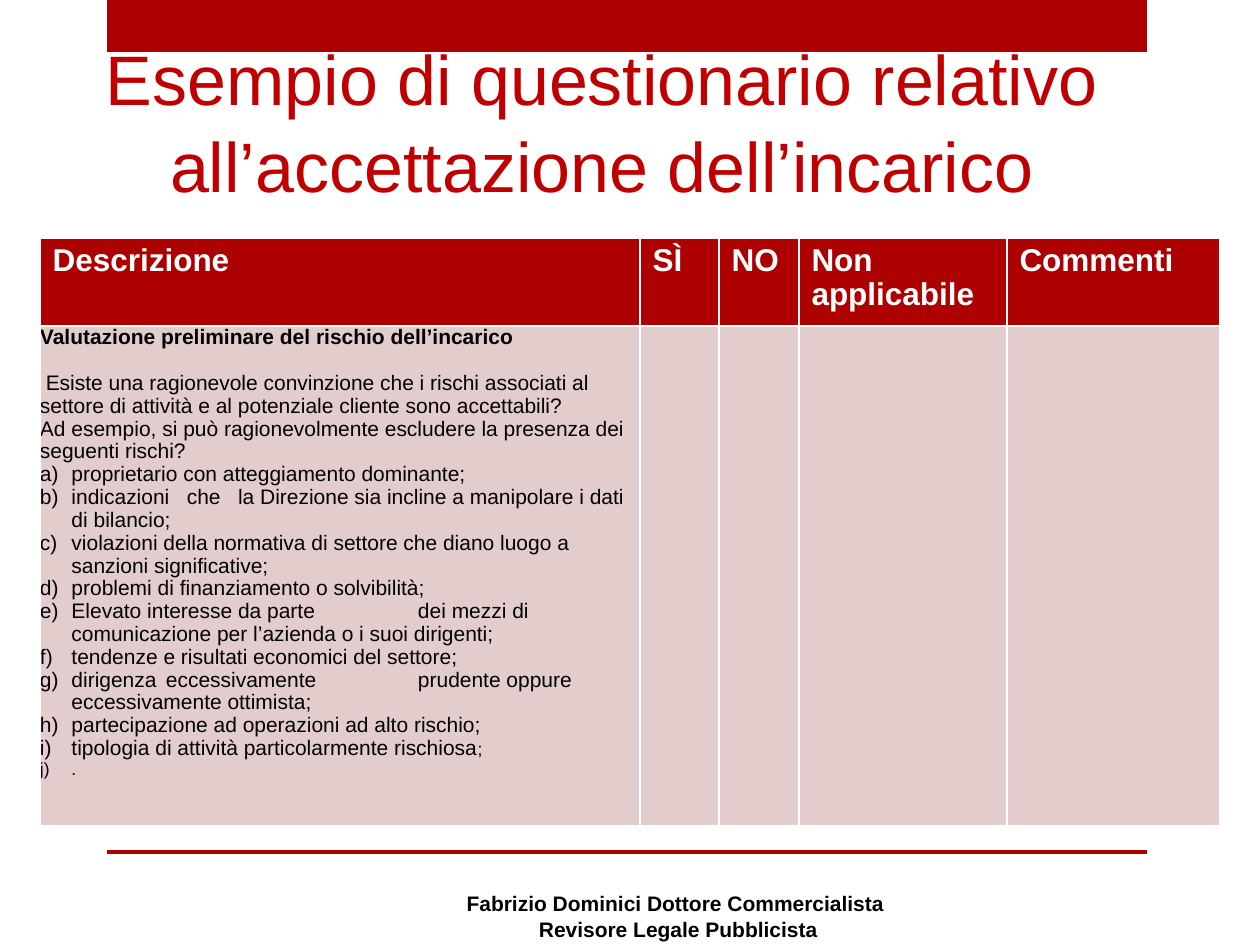
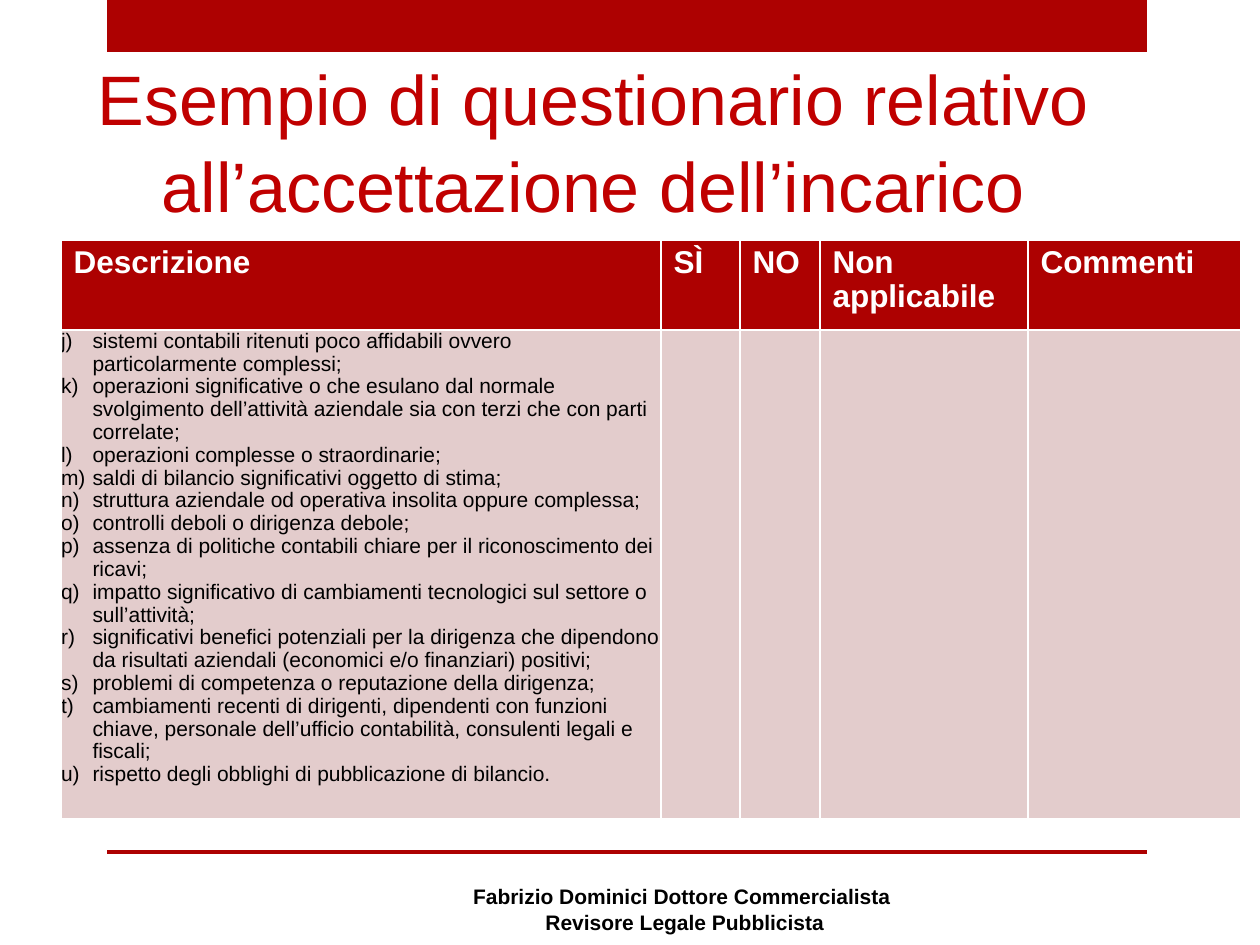
import pptx
import pptx.util
import pptx.dml.color
import pptx.enum.shapes
import pptx.enum.text
import pptx.oxml
import pptx.oxml.ns

SCALE = 914400 / 126
FONT = "Arial"
RED, TITLE, PALE = "AD0101", "C00000", "E3CCCC"
WHITE, BLACK = "FFFFFF", "000000"
INDENT = 31.5  # hanging indent of the lettered list, in px

HEADS = ["Descrizione", "SÌ", "NO", "Non applicabile", "Commenti"]
COLS = [600, 79, 80, 208, 213]
HEADING = "Esempio di questionario relativo all’accettazione dell’incarico"
FOOTER = "Fabrizio Dominici Dottore Commercialista\n Revisore Legale Pubblicista"

INTRO = [
    "Valutazione preliminare del rischio dell’incarico",
    " Esiste una ragionevole convinzione che i rischi associati al settore "
    "di attività e al potenziale cliente sono accettabili?",
    "Ad esempio, si può ragionevolmente escludere la presenza dei seguenti rischi?",
]
RISKS = [
    "proprietario con atteggiamento dominante;",
    "indicazioni   che   la Direzione sia incline a manipolare i dati di bilancio;",
    "violazioni della normativa di settore che diano luogo a sanzioni significative;",
    "problemi di finanziamento o solvibilità;",
    "Elevato interesse da parte\tdei mezzi di comunicazione per l’azienda o i suoi dirigenti;",
    "tendenze e risultati economici del settore;",
    "dirigenza\teccessivamente\tprudente oppure eccessivamente ottimista;",
    "partecipazione ad operazioni ad alto rischio;",
    "tipologia di attività particolarmente rischiosa",
    ".",
]
MORE = [
    "sistemi contabili ritenuti poco affidabili ovvero particolarmente complessi;",
    "operazioni significative o che esulano dal normale svolgimento "
    "dell’attività aziendale sia con terzi che con parti correlate;",
    "operazioni complesse o straordinarie;",
    "saldi di bilancio significativi oggetto di stima;",
    "struttura aziendale od operativa insolita oppure complessa;",
    "controlli deboli o dirigenza debole;",
    "assenza di politiche contabili chiare per il riconoscimento dei ricavi;",
    "impatto significativo di cambiamenti tecnologici sul settore o sull’attività;",
    "significativi benefici potenziali per la dirigenza che dipendono da "
    "risultati aziendali (economici e/o finanziari) positivi;",
    "problemi di competenza o reputazione della dirigenza;",
    "cambiamenti recenti di dirigenti, dipendenti con funzioni chiave, "
    "personale dell’ufficio contabilità, consulenti legali e fiscali;",
    "rispetto degli obblighi di pubblicazione di bilancio.",
]


def px(n):
    return pptx.util.Emu(round(n * SCALE))


def color(code):
    return pptx.dml.color.RGBColor.from_string(code)


def paint(item, code):
    item.fill.solid()
    item.fill.fore_color.rgb = color(code)


def style(para, size, code, bold=False, lead=1.0):
    para.line_spacing = lead
    for run in para.runs:
        font = run.font
        font.name, font.size, font.bold = FONT, pptx.util.Pt(size), bold
        font.color.rgb = color(code)


def add_bar(slide, x, y, w, h):
    kind = pptx.enum.shapes.MSO_SHAPE.RECTANGLE
    bar = slide.shapes.add_shape(kind, px(x), px(y), px(w), px(h))
    bar.shadow.inherit = False
    paint(bar, RED)
    bar.line.fill.background()


def add_text(slide, box, text, size, code, bold, anchor):
    frame = slide.shapes.add_textbox(*map(px, box)).text_frame
    frame.word_wrap = True
    frame.vertical_anchor = anchor
    frame.text = text
    for para in frame.paragraphs:
        para.alignment = pptx.enum.text.PP_ALIGN.CENTER
        style(para, size, code, bold, 1.04)


def add_edges(cell):
    props = cell._tc.get_or_add_tcPr()
    space = pptx.oxml.ns.nsdecls("a")
    for side in "LRTB":
        props.append(pptx.oxml.parse_xml(
            f'<a:ln{side} {space} w="12700"><a:solidFill>'
            f'<a:srgbClr val="{WHITE}"/></a:solidFill></a:ln{side}>'))


def add_letter(para, start):
    props = para._p.get_or_add_pPr()
    props.set("marL", str(px(INDENT)))
    props.set("indent", str(px(-INDENT)))
    props.set("defTabSz", "914400")
    space = pptx.oxml.ns.nsdecls("a")
    props.append(pptx.oxml.parse_xml(
        f'<a:buAutoNum {space} type="alphaLcParenR" startAt="{start}"/>'))


def fill_body(cell, intro, items, start):
    cell.margin_left = cell.margin_right = 0
    cell.margin_top = cell.margin_bottom = 0
    cell.text_frame.text = "\n".join(intro + items)
    paras = cell.text_frame.paragraphs
    for i, para in enumerate(paras):
        style(para, 12, BLACK, lead=0.975)
        if i >= len(intro):
            add_letter(para, start)
    return paras


def add_table(slide, x, y, rows, intro, items, start):
    frame = slide.shapes.add_table(2, len(COLS), px(x), px(y),
                                   px(sum(COLS)), px(sum(rows)))
    table = frame.table
    table.first_row = table.horz_banding = False
    for col, width in zip(table.columns, COLS):
        col.width = px(width)
    for row, height, code in zip(table.rows, rows, (RED, PALE)):
        row.height = px(height)
        for cell in row.cells:
            add_edges(cell)
            paint(cell, code)
    for i, head in enumerate(HEADS):
        cell = table.cell(0, i)
        cell.text_frame.text = head
        style(cell.text_frame.paragraphs[0], 18, WHITE, True, 0.975)
    return fill_body(table.cell(1, 0), intro, items, start)


def add_slide(deck, title, foot):
    slide = deck.slides.add_slide(deck.slide_layouts[6])
    anchor = pptx.enum.text.MSO_ANCHOR
    # Top band and bottom rule
    add_bar(slide, 107, 0, 1040, 52)
    add_bar(slide, 107, 850, 1040, 4)
    # Title and footer
    add_text(slide, title, HEADING, 40, TITLE, False, anchor.BOTTOM)
    add_text(slide, foot, FOOTER, 12, BLACK, True, anchor.MIDDLE)
    return slide


def main():
    deck = pptx.Presentation()
    deck.slide_width, deck.slide_height = px(1260), px(945)

    # Risks a to j
    slide = add_slide(deck, (84, 47, 1035, 166), (431, 891, 489, 50))
    paras = add_table(slide, 40, 238, (88, 500), INTRO, RISKS, 1)
    paras[0].runs[0].font.bold = True
    paras[1].space_before = pptx.util.Pt(13.4)
    paras[-2].add_run().text = ";"
    for run in (paras[-2].runs[-1], paras[-1].runs[0]):
        run.font.name, run.font.size = FONT, pptx.util.Pt(10)
        run.font.color.rgb = color(BLACK)

    # Risks j to u
    slide = add_slide(deck, (60, 28, 1066, 205), (444, 884, 476, 50))
    add_table(slide, 61, 240, (90, 486), [], MORE, 10)

    deck.save("out.pptx")


if __name__ == "__main__":
    main()
